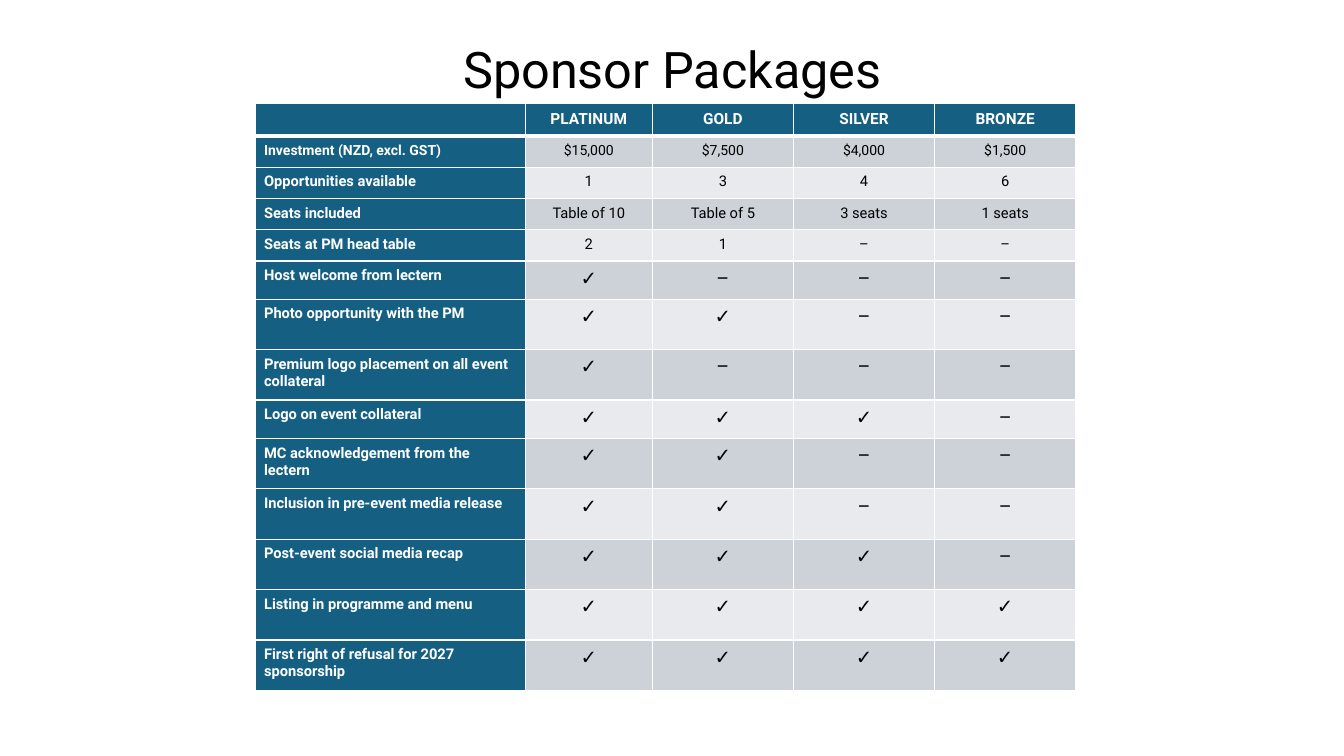
from dataclasses import dataclass

import pptx
import pptx.dml.color
import pptx.enum.text
import pptx.oxml
import pptx.oxml.ns
import pptx.presentation
import pptx.slide
import pptx.table
import pptx.util
from pptx.util import Inches

RGB = pptx.dml.color.RGBColor.from_string
ALIGN = pptx.enum.text.PP_ALIGN
CHECK, DASH = "✓", "–"


@dataclass(frozen=True)
class Theme:
    font: str = "Roboto"
    text: str = "000000"
    reverse: str = "FFFFFF"
    brand: str = "156082"
    bands: tuple[str, str] = ("CCD2D8", "E8EAED")
    title_size: float = 36
    head_size: float = 11
    price_size: float = 10
    body_size: float = 10.5
    mark_size: float = 14
    rule: float = 1
    head_rule: float = 3


@dataclass(frozen=True)
class Benefit:
    label: str
    values: tuple[str, ...]
    height: float
    size: float
    label_size: float


@dataclass(frozen=True)
class CellStyle:
    fill: str
    color: str
    size: float
    bold: bool = False
    align: ALIGN = ALIGN.CENTER
    top: float = 1
    bottom: float = 1


THEME = Theme()
TIERS = ("PLATINUM", "GOLD", "SILVER", "BRONZE")
COLUMN_WIDTHS = (2.68, 1.26, 1.4, 1.4, 1.4)
HEAD_HEIGHT = 0.32


def fact(label: str, *values: str, size: float = THEME.body_size) -> Benefit:
    return Benefit(label, values, 0.31, size, size)


def perk(label: str, tiers: int, height: float = 0.5) -> Benefit:
    """A benefit ticked for the given number of top tiers."""
    marks = tuple(CHECK if i < tiers else DASH for i in range(len(TIERS)))
    return Benefit(label, marks, height, THEME.mark_size, THEME.body_size)


BENEFITS = (
    fact("Investment (NZD, excl. GST)", "$15,000", "$7,500", "$4,000", "$1,500",
         size=THEME.price_size),
    fact("Opportunities available", "1", "3", "4", "6"),
    fact("Seats included", "Table of 10", "Table of 5", "3 seats", "1 seats"),
    fact("Seats at PM head table", "2", "1", DASH, DASH),
    perk("Host welcome from lectern", 1, 0.38),
    perk("Photo opportunity with the PM", 2),
    perk("Premium logo placement on all event collateral", 1),
    perk("Logo on event collateral", 3, 0.38),
    perk("MC acknowledgement from the lectern", 2),
    perk("Inclusion in pre-event media release", 2),
    perk("Post-event social media recap", 3),
    perk("Listing in programme and menu", 4),
    perk("First right of refusal for 2027 sponsorship", 4),
)


def add_run(p, text: str, size: float, color: str, bold: bool = False) -> None:
    r = p.add_run()
    r.text = text
    r.font.name = THEME.font
    r.font.size = pptx.util.Pt(size)
    r.font.bold = bold
    r.font.color.rgb = RGB(color)


def set_borders(cell: pptx.table._Cell, style: CellStyle) -> None:
    tc_pr = cell._tc.get_or_add_tcPr()
    widths = {"L": THEME.rule, "R": THEME.rule, "T": style.top, "B": style.bottom}
    for side, width in widths.items():
        tc_pr.append(pptx.oxml.parse_xml(
            f'<a:ln{side} {pptx.oxml.ns.nsdecls("a")} w="{pptx.util.Pt(width)}">'
            f'<a:solidFill><a:srgbClr val="{THEME.reverse}"/></a:solidFill>'
            f'</a:ln{side}>'))


def fill_cell(cell: pptx.table._Cell, text: str, style: CellStyle) -> None:
    set_borders(cell, style)
    cell.fill.solid()
    cell.fill.fore_color.rgb = RGB(style.fill)
    cell.margin_left = cell.margin_right = Inches(0.09)
    cell.margin_top = cell.margin_bottom = Inches(0.06)
    p = cell.text_frame.paragraphs[0]
    p.alignment = style.align
    if text:
        add_run(p, text, style.size, style.color, style.bold)
    else:
        # An empty cell would otherwise take the 18 pt default and stretch its row.
        end = pptx.oxml.parse_xml(
            f'<a:endParaRPr {pptx.oxml.ns.nsdecls("a")} sz="{int(style.size * 100)}"/>')
        p._p.append(end)


def add_title(s: pptx.slide.Slide, text: str) -> None:
    sp = s.shapes.title
    sp.left, sp.top = Inches(0.92), Inches(0.4)
    sp.width, sp.height = Inches(11.5), Inches(0.63)
    tf = sp.text_frame
    tf.word_wrap = True
    tf.auto_size = pptx.enum.text.MSO_AUTO_SIZE.NONE
    tf.vertical_anchor = pptx.enum.text.MSO_ANCHOR.MIDDLE
    p = tf.paragraphs[0]
    p.alignment = ALIGN.CENTER
    p.line_spacing = 0.9
    add_run(p, text, THEME.title_size, THEME.text)


def add_packages(s: pptx.slide.Slide) -> None:
    heights = [HEAD_HEIGHT] + [b.height for b in BENEFITS]
    table = s.shapes.add_table(
        len(heights), len(COLUMN_WIDTHS), Inches(2.53), Inches(1.03),
        Inches(sum(COLUMN_WIDTHS)), Inches(sum(heights))).table
    for column, width in zip(table.columns, COLUMN_WIDTHS):
        column.width = Inches(width)
    for row, height in zip(table.rows, heights):
        row.height = Inches(height)

    head = CellStyle(THEME.brand, THEME.reverse, THEME.head_size, bold=True,
                     bottom=THEME.head_rule)
    for col, text in enumerate(("", *TIERS)):
        fill_cell(table.cell(0, col), text, head)

    for row, benefit in enumerate(BENEFITS, start=1):
        top = THEME.head_rule if row == 1 else THEME.rule
        label = CellStyle(THEME.brand, THEME.reverse, benefit.label_size, bold=True,
                          align=ALIGN.LEFT, top=top)
        value = CellStyle(THEME.bands[(row - 1) % 2], THEME.text, benefit.size, top=top)
        fill_cell(table.cell(row, 0), benefit.label, label)
        for col, text in enumerate(benefit.values, start=1):
            fill_cell(table.cell(row, col), text, value)


def main() -> None:
    prs = pptx.Presentation()
    prs.slide_width, prs.slide_height = Inches(13.33), Inches(7.5)
    s = prs.slides.add_slide(prs.slide_layouts.get_by_name("Title Only"))
    add_title(s, "Sponsor Packages")
    add_packages(s)
    prs.save("out.pptx")


if __name__ == "__main__":
    main()
